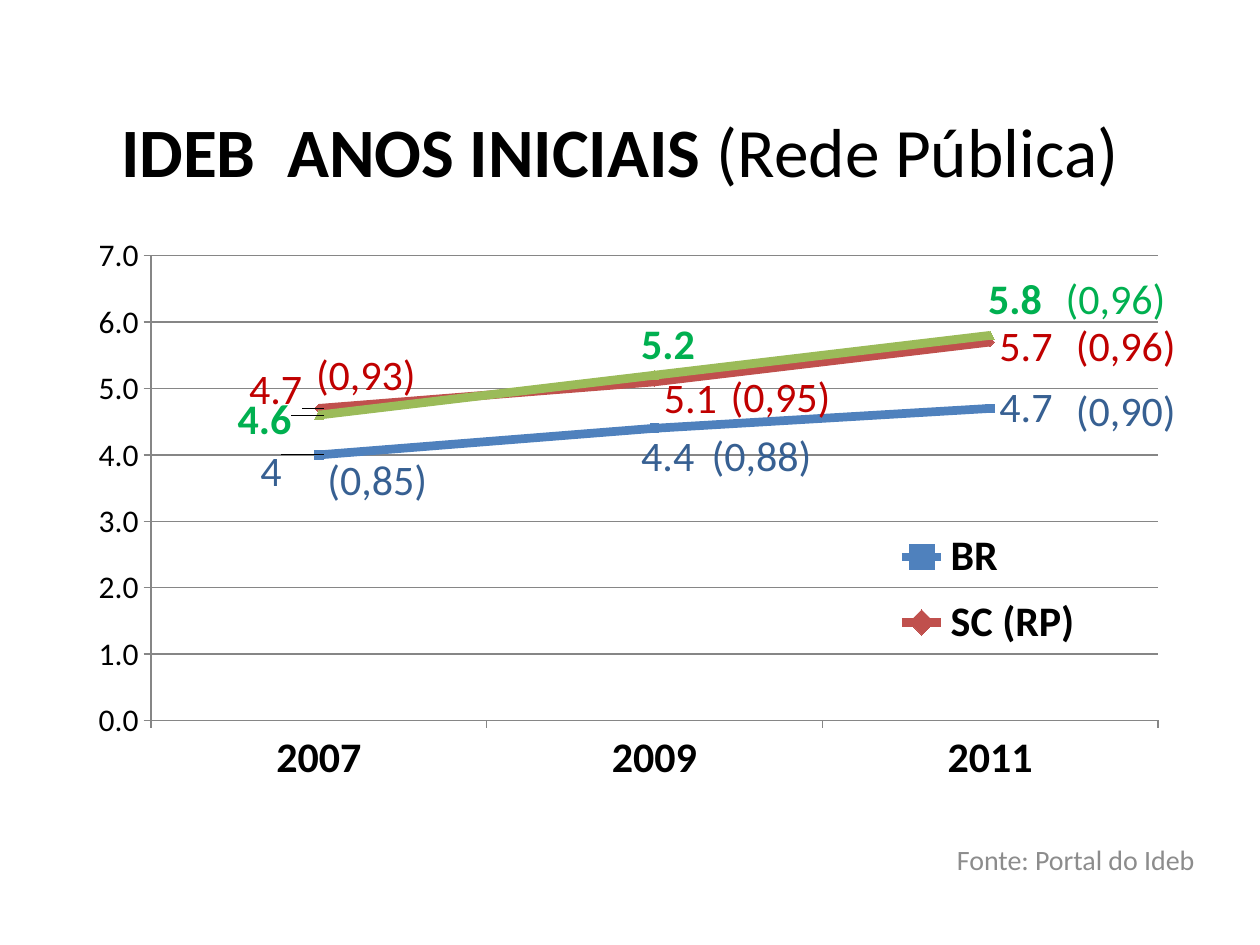
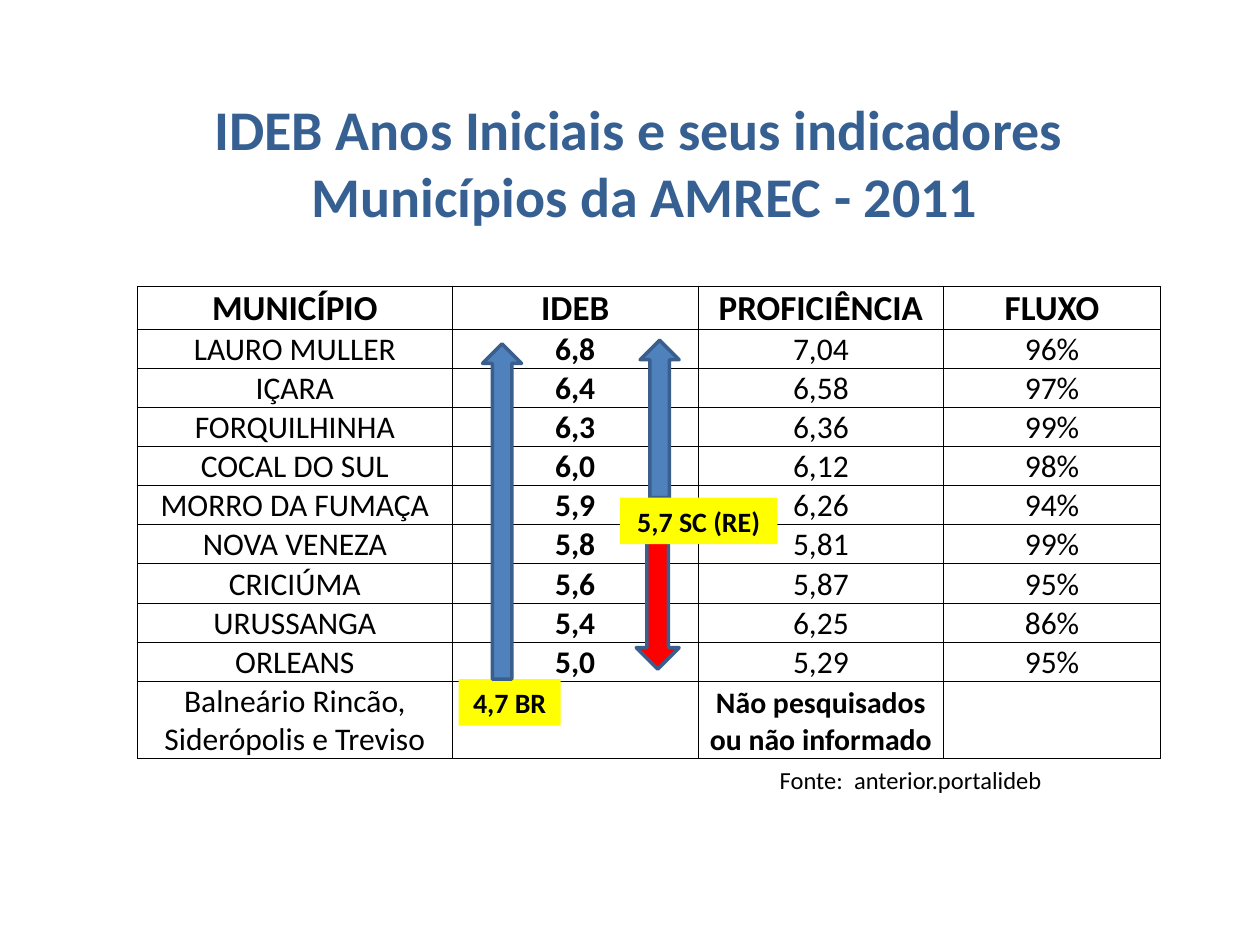
import pptx
import pptx.chart.data
import pptx.dml.color
import pptx.enum.chart
import pptx.enum.shapes
import pptx.enum.text
import pptx.oxml
import pptx.oxml.ns
import pptx.util

Inches = pptx.util.Inches
Pt = pptx.util.Pt
Align = pptx.enum.text.PP_ALIGN
Anchor = pptx.enum.text.MSO_ANCHOR
Shape = pptx.enum.shapes.MSO_SHAPE
Mark = pptx.enum.chart.XL_MARKER_STYLE
FONT = "Calibri"
BLACK, GREY, RULE = "000000", "8C8C8C", "868686"
NAVY, WINE, GREEN = "376092", "C00000", "00B050"
BLUE, EDGE, RED, YELLOW = "4F81BD", "3A5F8C", "FF0000", "FFFF00"

YEARS = ["2007", "2009", "2011"]
LINES = [
    ("BR", (4, 4.4, 4.7), BLUE, NAVY, False, Mark.SQUARE,
     [(-0.06, 0.03), (-0.02, 0.05), (0, 0)]),
    ("SC (RP)", (4.7, 5.1, 5.7), "C0504D", WINE, False, Mark.DIAMOND,
     [(-0.07, -0.03), (0, 0.03), (0, 0.01)]),
    ("", (4.6, 5.2, 5.8), "9BBB59", GREEN, True, Mark.TRIANGLE,
     [(-0.08, 0.01), (-0.02, -0.05), (-0.01, -0.06)]),
]
RATES = [
    ("(0,93)", 2.41, 2.72, WINE), ("(0,85)", 2.5, 3.55, NAVY),
    ("(0,88)", 5.55, 3.36, NAVY), ("(0,90)", 8.44, 3, NAVY),
    ("(0,96)", 8.44, 2.49, WINE), ("(0,95)", 5.7, 2.89, WINE),
    ("(0,96)", 8.36, 2.11, GREEN),
]
TOWNS = [
    ("MUNICÍPIO", "IDEB", "PROFICIÊNCIA", "FLUXO"),
    ("LAURO MULLER", "6,8", "7,04", "96%"),
    ("IÇARA", "6,4", "6,58", "97%"),
    ("FORQUILHINHA", "6,3", "6,36", "99%"),
    ("COCAL DO SUL", "6,0", "6,12", "98%"),
    ("MORRO DA FUMAÇA", "5,9", "6,26", "94%"),
    ("NOVA VENEZA", "5,8", "5,81", "99%"),
    ("CRICIÚMA", "5,6", "5,87", "95%"),
    ("URUSSANGA", "5,4", "6,25", "86%"),
    ("ORLEANS", "5,0", "5,29", "95%"),
    ("Balneário Rincão, Siderópolis e Treviso", "",
     "Não pesquisados ou não informado", ""),
]


def rgb(code):
    """Turn a hex string into a colour."""
    return pptx.dml.color.RGBColor.from_string(code)


def paint(part, code):
    """Give a fill or a line one solid colour."""
    fill = part if hasattr(part, "solid") else part.fill
    fill.solid()
    fill.fore_color.rgb = rgb(code)


def style(font, size, color=BLACK, bold=False):
    """Set the face, size, colour and weight of a font."""
    font.name, font.size, font.bold = FONT, Pt(size), bold
    font.color.rgb = rgb(color)


def write(frame, text, size, color=BLACK, bold=False, align=Align.LEFT):
    """Put one styled paragraph into a text frame."""
    frame.text = text
    para = frame.paragraphs[0]
    para.alignment = align
    for run in para.runs:
        style(run.font, size, color, bold)
    return para


def label(slide, box, text, size, *look):
    """Add a wrapped text box and return its paragraph."""
    frame = slide.shapes.add_textbox(*map(Inches, box)).text_frame
    frame.word_wrap = True
    return write(frame, text, size, *look)


def block(slide, kind, box, color, edge=None):
    """Add a filled preset shape without a shadow."""
    item = slide.shapes.add_shape(kind, *map(Inches, box))
    item.shadow.inherit = False
    paint(item.fill, color)
    if edge:
        paint(item.line, edge)
        item.line.width = Pt(2)
    else:
        item.line.fill.background()
    return item


def tag(slide, box, text):
    """Add a yellow box with bold text."""
    frame = block(slide, Shape.RECTANGLE, box, YELLOW).text_frame
    frame.word_wrap = False
    frame.vertical_anchor = Anchor.MIDDLE
    write(frame, text, 16, BLACK, True, Align.CENTER)


def node(body, space="c"):
    """Parse one XML element of the given namespace."""
    first, rest = body.split(">", 1)
    slash = "/" if first.endswith("/") else ""
    names = pptx.oxml.ns.nsdecls(space)
    return pptx.oxml.parse_xml(f"{first.rstrip('/')} {names}{slash}>{rest}")


def layout(x, y, width=None, height=None, inner=False):
    """Build a manual chart layout, as an offset or as a full area."""
    tags = [("layoutTarget", "inner")] if inner else []
    if width:
        tags += [("xMode", "edge"), ("yMode", "edge")]
    tags += [("x", x), ("y", y)]
    if width:
        tags += [("w", width), ("h", height)]
    body = "".join(f'<c:{name} val="{val}"/>' for name, val in tags)
    return node(f"<c:layout><c:manualLayout>{body}</c:manualLayout></c:layout>")


def place(part, area):
    """Set the layout of a plot area or a legend."""
    for old in part.xpath("c:layout"):
        part.remove(old)
    spot = len(part.xpath("c:legendPos | c:legendEntry"))
    part.insert(spot, area)


def unlead(tags):
    """Turn off the leader lines of moved labels."""
    tags.append(node(
        '<c:extLst><c:ext uri="{CE6537A1-D6FC-4f65-9D91-7224C49458BB}" '
        'xmlns:c15="http://schemas.microsoft.com/office/drawing/2012/chart">'
        '<c15:showLeaderLines val="0"/></c:ext></c:extLst>'))


def draw(series, look):
    """Style one line, its markers and its point labels."""
    _, _, color, ink, bold, mark, shifts = look
    series.smooth = False
    paint(series.format.line, color)
    series.format.line.width = Pt(5)
    series.marker.style, series.marker.size = mark, 5
    paint(series.marker.format.fill, color)
    paint(series.marker.format.line, color)
    right = pptx.enum.chart.XL_LABEL_POSITION.RIGHT
    tags = series.data_labels
    tags.show_value, tags.position = True, right
    style(tags.font, 24, ink, bold)
    for spot, shift in enumerate(shifts):
        if any(shift):
            note = series.points[spot].data_label
            style(note.font, 24, ink, bold)
            note.position = right
            item = tags._element.xpath(f"c:dLbl[c:idx/@val={spot}]")[0]
            item.insert(1, layout(*shift))
    unlead(tags._element)


def axes(chart):
    """Style both axes and the grid."""
    for axis, size, bold in ((chart.category_axis, 24, True),
                             (chart.value_axis, 18, False)):
        style(axis.tick_labels.font, size, BLACK, bold)
        axis.major_tick_mark = pptx.enum.chart.XL_TICK_MARK.OUTSIDE
        paint(axis.format.line, RULE)
    scale = chart.value_axis
    scale.minimum_scale, scale.maximum_scale, scale.major_unit = 0, 7, 1
    scale.tick_labels.number_format = "0.0"
    scale.tick_labels.number_format_is_linked = False
    paint(scale.major_gridlines.format.line, RULE)


def graph(slide, box):
    """Add the line chart with its legend."""
    data = pptx.chart.data.CategoryChartData()
    data.categories = YEARS
    for look in LINES:
        data.add_series(look[0], look[1])
    kind = pptx.enum.chart.XL_CHART_TYPE.LINE_MARKERS
    chart = slide.shapes.add_chart(kind, *map(Inches, box), data).chart
    style(chart.font, 10)
    chart.has_title = False
    chart.plots[0].vary_by_categories = False
    for series, look in zip(chart.plots[0].series, LINES):
        draw(series, look)
    axes(chart)
    chart.has_legend = True
    chart.legend.include_in_layout = False
    style(chart.legend.font, 24, BLACK, True)
    key = chart.element.xpath(".//c:legend")[0]
    key.insert(1, node(
        '<c:legendEntry><c:idx val="2"/><c:delete val="1"/></c:legendEntry>'))
    place(key, layout(0.74, 0.5, 0.18, 0.25))
    area = chart.element.xpath(".//c:plotArea")[0]
    place(area, layout(0.09, 0.05, 0.89, 0.8, True))


def border(cell):
    """Draw thin black borders around a cell."""
    props = cell._tc.get_or_add_tcPr()
    for spot, side in enumerate("LRTB"):
        props.insert(spot, node(
            f'<a:ln{side} w="6350"><a:solidFill>'
            f'<a:srgbClr val="{BLACK}"/></a:solidFill></a:ln{side}>', "a"))


def grid(slide, left, top, widths, heights):
    """Add the table of towns."""
    box = (left, top, sum(widths), sum(heights))
    table = slide.shapes.add_table(
        len(heights), len(widths), *map(Inches, box)).table
    table.first_row = table.horz_banding = False
    for col, width in zip(table.columns, widths):
        col.width = Inches(width)
    last = len(heights) - 1
    for y, (height, words) in enumerate(zip(heights, TOWNS)):
        table.rows[y].height = Inches(height)
        for x, text in enumerate(words):
            cell = table.cell(y, x)
            cell.fill.background()
            cell.vertical_anchor = Anchor.BOTTOM
            cell.margin_left = cell.margin_right = cell.margin_top = Inches(0.01)
            cell.margin_bottom = 0
            size = 20 if y == 0 else 17 if (y, x) == (last, 2) else 18
            bold = y == 0 or x == 1 or (y, x) == (last, 2)
            write(cell.text_frame, text, size, BLACK, bold, Align.CENTER)
            border(cell)


def trend(slide):
    """Build the slide with the chart."""
    title = label(slide, (0.67, 0.81, 8.5, 0.82), "IDEB  ANOS INICIAIS ",
                  39.6, BLACK, True, Align.CENTER)
    rest = title.add_run()
    rest.text = "(Rede Pública)"
    style(rest.font, 39.6)
    label(slide, (2.58, 6.64, 7, 0.45), "Fonte: Portal do Ideb",
          16, GREY, False, Align.RIGHT)
    graph(slide, (0.39, 1.8, 8.98, 4.61))
    for text, left, top, color in RATES:
        label(slide, (left, top, 1.02, 0.5), text, 24, color)


def towns(slide):
    """Build the slide with the table."""
    label(slide, (1.41, 0.7, 7.42, 1.18),
          "IDEB Anos Iniciais e seus indicadores  Municípios da AMREC - 2011",
          32, NAVY, True, Align.CENTER)
    grid(slide, 1.09, 2.27, (2.5, 1.95, 1.95, 1.72), [0.34] + [0.3] * 9 + [0.6])
    label(slide, (6.09, 6.02, 2.66, 0.34), "Fonte:  anterior.portalideb", 14)
    block(slide, Shape.UP_ARROW, (5.08, 2.7, 0.31, 1.25), BLUE, EDGE)
    block(slide, Shape.DOWN_ARROW, (5.05, 4.22, 0.34, 1.09), RED, EDGE)
    tag(slide, (3.64, 5.39, 0.81, 0.37), "4,7 BR")
    tag(slide, (4.92, 3.95, 1.25, 0.37), "5,7 SC (RE)")
    block(slide, Shape.UP_ARROW, (3.83, 2.73, 0.31, 2.66), BLUE, EDGE)


def main():
    """Build both slides and save the file."""
    deck = pptx.Presentation()
    deck.slide_width, deck.slide_height = Inches(10), Inches(7.5)
    for build in (trend, towns):
        build(deck.slides.add_slide(deck.slide_layouts[6]))
    deck.save("out.pptx")


if __name__ == "__main__":
    main()
